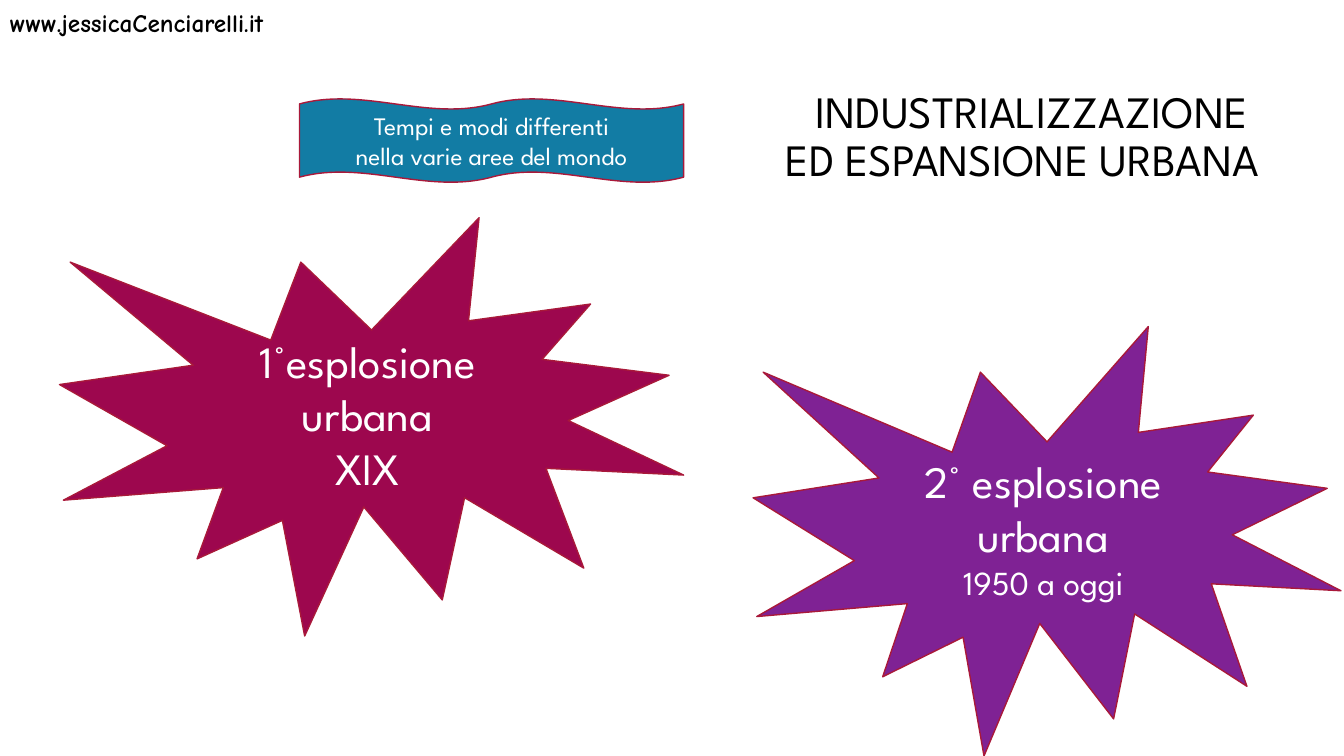
from pptx import Presentation
from pptx.dml.color import RGBColor
from pptx.enum.shapes import MSO_SHAPE
from pptx.enum.text import MSO_ANCHOR, PP_ALIGN
from pptx.util import Inches, Pt

SANS, COMIC = "League Spartan", "Comic Neue"
BLACK, WHITE, OUTLINE = "000000", "FFFFFF", "A9193A"

# "\v" is a line break within the paragraph
TITLE = "INDUSTRIALIZZAZIONE \vED ESPANSIONE URBANA"
SITE = "www.jessicaCenciarelli.it"

# preset, (left, top, width, height), fill, [(line, size)]
SHAPES = [
    (MSO_SHAPE.DOUBLE_WAVE, (2.97, 0.98, 3.81, 0.83), "127CA4",
     [("Tempi e modi differenti", 18), ("nella varie aree del mondo", 18)]),
    (MSO_SHAPE.EXPLOSION1, (0.59, 2.16, 6.19, 4.15), "9D074E",
     [("1°esplosione", 32), ("urbana", 32), ("XIX", 32)]),
    (MSO_SHAPE.EXPLOSION1, (7.47, 3.24, 5.83, 4.26), "7F2294",
     [("2° esplosione", 32), ("urbana", 32), ("1950 a oggi", 24)]),
]


def rgb(color):
    return RGBColor.from_string(color)


def write(sp, lines, font=SANS, color=WHITE, bold=False, align=PP_ALIGN.CENTER,
          anchor=MSO_ANCHOR.MIDDLE, spacing=None):
    """Fill a shape with one paragraph per (text, size) pair."""
    tf = sp.text_frame
    tf.word_wrap = True
    tf.vertical_anchor = anchor
    for i, (text, size) in enumerate(lines):
        p = tf.add_paragraph() if i else tf.paragraphs[0]
        p.text = text
        p.alignment = align
        p.line_spacing = spacing
        for r in p.runs:
            r.font.name = font
            r.font.size = Pt(size)
            r.font.bold = bold
            r.font.color.rgb = rgb(color)


def add_text(s, box, lines, **style):
    sp = s.shapes.add_textbox(*map(Inches, box))
    write(sp, lines, color=BLACK, anchor=MSO_ANCHOR.TOP, **style)


def add_shape(s, preset, box, fill, lines):
    sp = s.shapes.add_shape(preset, *map(Inches, box))
    sp.shadow.inherit = False
    sp.fill.solid()
    sp.fill.fore_color.rgb = rgb(fill)
    sp.line.color.rgb = rgb(OUTLINE)
    sp.line.width = Pt(1)
    write(sp, lines)


prs = Presentation()
prs.slide_width, prs.slide_height = Inches(13.33), Inches(7.5)
s = prs.slides.add_slide(prs.slide_layouts[6])

add_text(s, (3.17, 0.84, 9.42, 0.58), [(TITLE, 32)],
         align=PP_ALIGN.RIGHT, spacing=0.9)
add_text(s, (0, 0.02, 3.41, 0.4), [(SITE, 18)],
         font=COMIC, bold=True, align=PP_ALIGN.LEFT)
for shape in SHAPES:
    add_shape(s, *shape)

prs.save("out.pptx")
